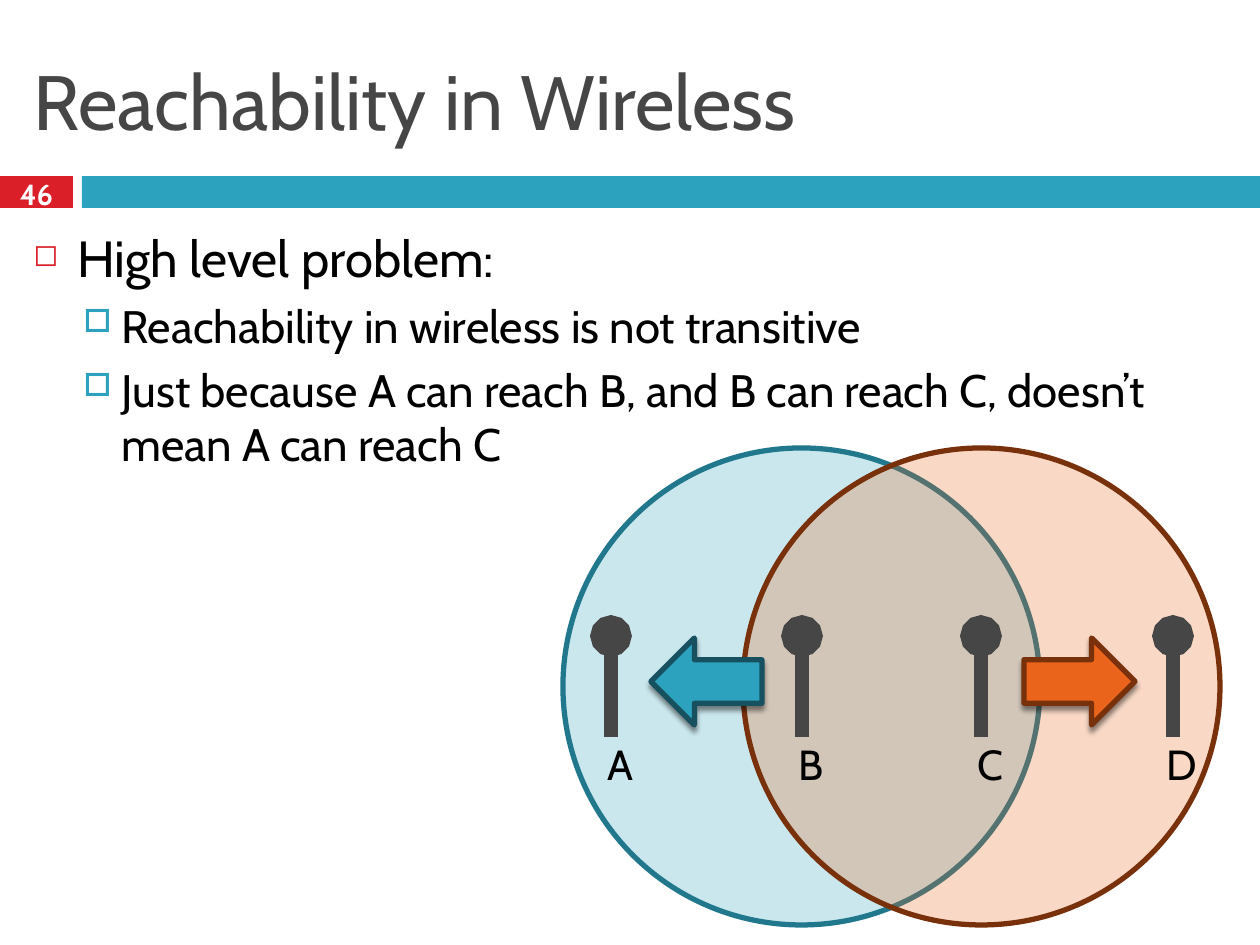
from dataclasses import dataclass

from lxml.etree import SubElement
from pptx import Presentation
from pptx.dml.color import RGBColor
from pptx.enum.shapes import MSO_CONNECTOR, MSO_SHAPE
from pptx.enum.text import MSO_ANCHOR, PP_ALIGN
from pptx.oxml.ns import qn
from pptx.util import Emu, Pt


def px(length):
    """Turn pixels into EMU."""
    return Emu(round(length * 914400 / 126))


@dataclass(frozen=True)
class Theme:
    """Colours, font and type sizes."""
    font: str = "Cabin"
    red: str = "DA1F28"
    teal: str = "2DA2BF"
    teal_edge: str = "21788D"
    teal_dark: str = "175160"
    orange: str = "EB641B"
    orange_dark: str = "78310B"
    gray: str = "464646"
    black: str = "000000"
    white: str = "FFFFFF"
    title_size: float = 44
    body_size: float = 29
    sub_size: float = 26
    label_size: float = 24
    number_size: float = 16.6


class SlideBuilder:
    """Draws the kinds of element used on the slide."""

    def __init__(self, slide, theme):
        self.slide = slide
        self.theme = theme

    def shape(self, kind, frame, fill, edge=None, alpha=None):
        """Add a filled preset shape."""
        shape = self.slide.shapes.add_shape(kind, *map(px, frame))
        shape.shadow.inherit = False
        shape.fill.solid()
        shape.fill.fore_color.rgb = RGBColor.from_string(fill)
        if alpha:
            color = shape.element.spPr.find(qn("a:solidFill"))[0]
            SubElement(color, qn("a:alpha"), val=str(alpha * 1000))
        if edge:
            shape.line.color.rgb = RGBColor.from_string(edge)
            shape.line.width = Pt(3)
        else:
            shape.line.fill.background()
        return shape

    def arrow(self, frame, rotation, fill, edge):
        """Add a rotated block arrow with a soft shadow."""
        arrow = self.shape(MSO_SHAPE.UP_ARROW, frame, fill, edge)
        arrow.rotation = rotation
        effects = arrow.element.spPr.find(qn("a:effectLst"))
        shadow = SubElement(effects, qn("a:outerShdw"), blurRad=str(Pt(3)),
                            dist=str(Pt(2.4)), dir="5400000", rotWithShape="0")
        color = SubElement(shadow, qn("a:srgbClr"), val=self.theme.black)
        SubElement(color, qn("a:alpha"), val="45000")

    def text_frame(self, shapes, frame, anchor=MSO_ANCHOR.TOP):
        """Add a wrapping text box and return its text frame."""
        text_frame = shapes.add_textbox(*map(px, frame)).text_frame
        text_frame.word_wrap = True
        text_frame.vertical_anchor = anchor
        return text_frame

    def style(self, paragraph, size, color, align=PP_ALIGN.LEFT, bold=False):
        """Set the font and alignment of a paragraph."""
        paragraph.alignment = align
        paragraph.font.name = self.theme.font
        paragraph.font.size = Pt(size)
        paragraph.font.bold = bold
        paragraph.font.color.rgb = RGBColor.from_string(color)

    def text(self, frame, wording, size, color, **options):
        """Add one vertically centred line of text."""
        text_frame = self.text_frame(self.slide.shapes, frame, MSO_ANCHOR.MIDDLE)
        paragraph = text_frame.paragraphs[0]
        paragraph.text = wording
        self.style(paragraph, size, color, **options)

    def bullets(self, frame, items):
        """Add a two-level bulleted list."""
        theme = self.theme
        levels = [(44, 44, 7, "◻", theme.red, 60, theme.body_size),
                  (88, 38, 5.5, "□", theme.teal, 70, theme.sub_size)]
        text_frame = self.text_frame(self.slide.shapes, frame)
        for index, (level, wording) in enumerate(items):
            margin, hang, before, mark, color, percent, size = levels[level]
            paragraph = text_frame.add_paragraph() if index else text_frame.paragraphs[0]
            paragraph.text = wording
            paragraph.level = level
            properties = paragraph._p.get_or_add_pPr()
            properties.set("marL", str(px(margin)))
            properties.set("indent", str(px(-hang)))
            bullet_color = SubElement(properties, qn("a:buClr"))
            SubElement(bullet_color, qn("a:srgbClr"), val=color)
            SubElement(properties, qn("a:buSzPct"), val=str(percent * 1000))
            SubElement(properties, qn("a:buChar"), char=mark)
            paragraph.space_before = Pt(before)
            self.style(paragraph, size, theme.black)

    def station(self, name, center):
        """Add a grouped antenna and its label."""
        shapes = self.slide.shapes.add_group_shape().shapes
        mast = shapes.add_connector(MSO_CONNECTOR.STRAIGHT,
                                    px(center), px(636), px(center), px(737))
        mast.line.color.rgb = RGBColor.from_string(self.theme.gray)
        mast.line.width = Pt(8)
        properties = mast.element.spPr
        SubElement(properties.find(qn("a:ln")), qn("a:headEnd"), type="oval")
        SubElement(properties, qn("a:effectLst"))
        label = self.text_frame(shapes, (center - 7, 732, 32, 40))
        label.margin_left = label.margin_right = 0
        label.word_wrap = False
        paragraph = label.paragraphs[0]
        paragraph.text = name
        self.style(paragraph, self.theme.label_size, self.theme.black, PP_ALIGN.CENTER)


def main():
    """Build the wireless reachability slide."""
    theme = Theme()
    deck = Presentation()
    deck.slide_width, deck.slide_height = px(1260), px(945)
    page = SlideBuilder(deck.slides.add_slide(deck.slide_layouts[6]), theme)

    page.shape(MSO_SHAPE.RECTANGLE, (0, 176, 73, 32), theme.red)
    page.shape(MSO_SHAPE.RECTANGLE, (82, 176, 1178, 32), theme.teal)
    page.text((21, 32, 1218, 136), "Reachability in Wireless",
              theme.title_size, theme.gray)
    page.text((0, 173, 73, 42), "46", theme.number_size, theme.white,
              align=PP_ALIGN.CENTER, bold=True)
    page.bullets((21, 221, 1218, 703), [
        (0, "High level problem:"),
        (1, "Reachability in wireless is not transitive"),
        (1, "Just because A can reach B, and B can reach C, doesn’t mean A can reach C"),
    ])

    for left, fill, edge in [(563, theme.teal, theme.teal_edge),
                             (743, theme.orange, theme.orange_dark)]:
        page.shape(MSO_SHAPE.OVAL, (left, 448, 477, 477), fill, edge, alpha=25)
    page.arrow((663, 626, 87, 111), 270, theme.teal, theme.teal_dark)
    page.arrow((1036, 626, 87, 111), 90, theme.orange, theme.orange_dark)
    for name, center in zip("ABCD", (611, 802, 981, 1173)):
        page.station(name, center)

    deck.save("out.pptx")


if __name__ == "__main__":
    main()
